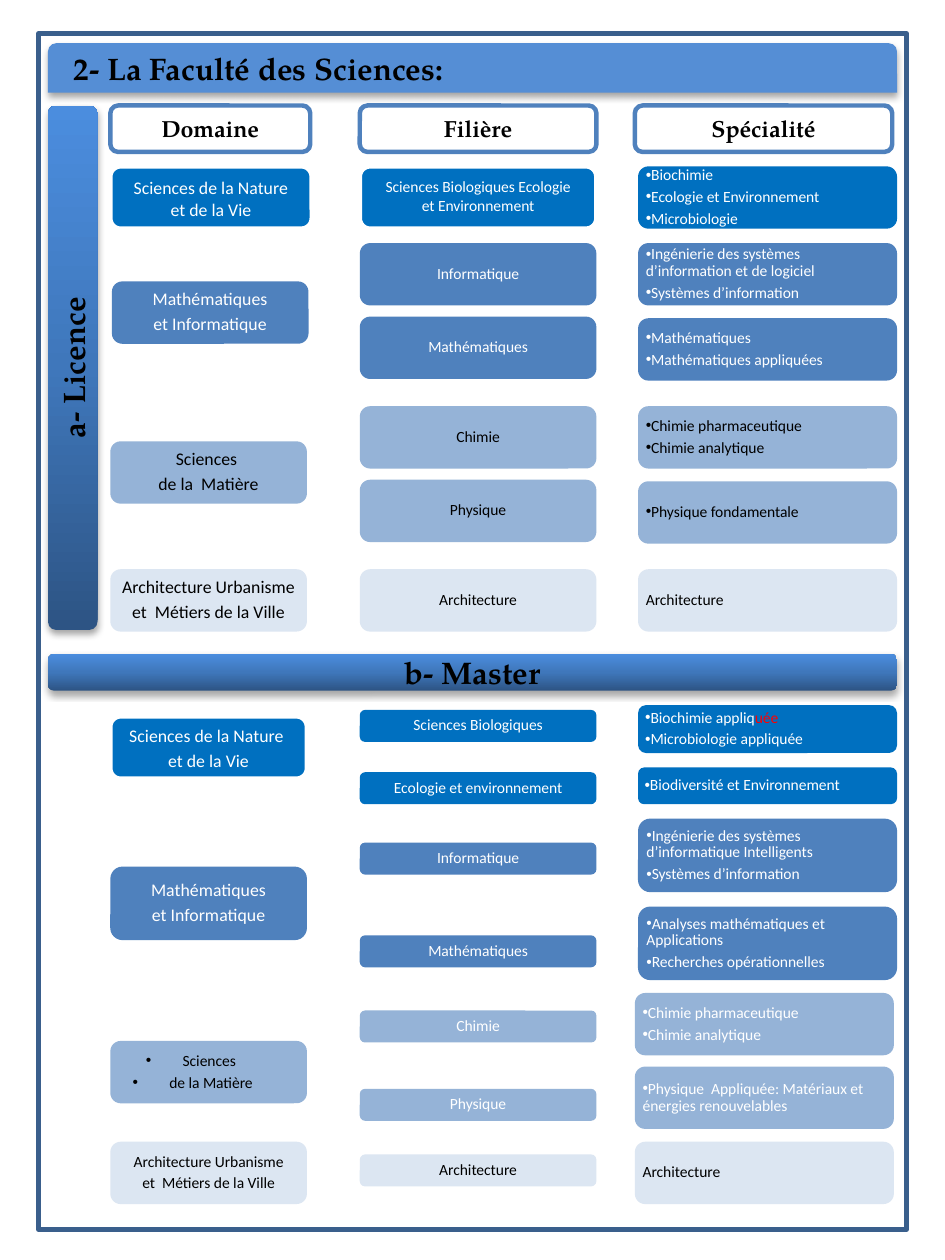
from copy import deepcopy
from pptx import Presentation
from pptx.dml.color import RGBColor as Rgb
from pptx.enum.shapes import MSO_SHAPE as Form
from pptx.enum.text import MSO_ANCHOR as Anchor, PP_ALIGN as Align
from pptx.oxml.ns import qn
from pptx.oxml.xmlchemy import OxmlElement as Node
from pptx.util import Inches, Pt

HUES = {
    "white": "FFFFFF", "black": "000000", "red": "FF0000", "bar": "558ED5",
    "frame": "3A5F8C", "deep": "0070C0", "blue": "4F81BD", "sky": "95B3D7",
    "pale": "DCE6F2", "low": "2D5484", "mid": "3F77BB", "top": "4B8DDE",
}
SERIF = {"name": "TeX Gyre Pagella", "bold": True}
SANS = {"name": "Calibri", "bold": False}
SLIM = (0.03, 0.03, 0.03, 0.03)
WIDE = (0.1, 0.05, 0.1, 0.05)
RIM = {"line": "white", "pad": WIDE, "anchor": Anchor.TOP}
SOLID = {**RIM, "tight": False}
COLS = {"dom": (0.69, 1.23), "fil": (2.25, 1.48), "spec": (3.99, 1.62)}

HEADS = [(0.69, 1.25, "Domaine"), (2.25, 1.48, "Filière"), (3.97, 1.61, "Spécialité")]

DOM = [
    (1.04, 0.39, "deep", "white", "Sciences de la Nature et de la Vie", {**SOLID, "wide": 1.26}),
    (1.76, 0.39, "blue", "white", "Mathématiques\net Informatique", {"left": 0.7}),
    (2.76, 0.39, "sky", "black", "Sciences \nde la  Matière", {}),
    (3.56, 0.39, "pale", "black", "Architecture Urbanisme\net  Métiers de la Ville", {}),
    (4.48, 0.39, "deep", "white", "Sciences de la Nature \net de la Vie", RIM),
    (5.42, 0.46, "blue", "white", "Mathématiques\net Informatique", {}),
    (6.51, 0.39, "sky", "black", "Sciences \nde la Matière",
     {"size": 7, "dots": True, "hang": 0.23, "pad": (0.03, 0.03, 0.23, 0.03)}),
    (7.14, 0.39, "pale", "black", "Architecture Urbanisme\net  Métiers de la Ville", {"size": 7}),
]
FIL = [
    (1.04, 0.39, "deep", "white", "Sciences Biologiques Ecologie et Environnement", SOLID),
    (1.52, 0.39, "blue", "white", "Informatique", {}),
    (1.98, 0.39, "blue", "white", "Mathématiques", {}),
    (2.54, 0.39, "sky", "black", "Chimie", {}),
    (3, 0.39, "sky", "black", "Physique", {}),
    (3.56, 0.39, "pale", "black", "Architecture", {}),
    (4.44, 0.2, "deep", "white", "Sciences Biologiques", {}),
    (4.83, 0.2, "deep", "white", "Ecologie et environnement", {}),
    (5.27, 0.2, "blue", "white", "Informatique", {}),
    (5.85, 0.2, "blue", "white", "Mathématiques", {}),
    (6.32, 0.2, "sky", "white", "Chimie", {}),
    (6.81, 0.2, "sky", "white", "Physique", {}),
    (7.22, 0.2, "pale", "black", "Architecture", {}),
]
SPEC = [
    (1.04, 0.39, "deep", "white", "Biochimie\nEcologie et Environnement\nMicrobiologie", {}),
    (1.52, 0.39, "blue", "white",
     "Ingénierie des systèmes d’information et de logiciel\nSystèmes d’information", {}),
    (1.99, 0.39, "blue", "white", "Mathématiques\nMathématiques appliquées", {}),
    (2.54, 0.39, "sky", "black", "Chimie pharmaceutique\nChimie analytique", {}),
    (3.01, 0.39, "sky", "black", "Physique fondamentale", {}),
    (3.56, 0.39, "pale", "black", "Architecture", {"dots": False}),
    (4.41, 0.3, "deep", "white", "Biochimie appliq|uée\nMicrobiologie appliquée", {}),
    (4.8, 0.23, "deep", "white", "Biodiversité et Environnement", {}),
    (5.12, 0.46, "blue", "white",
     "Ingénierie des systèmes d’informatique Intelligents\nSystèmes d’information", {}),
    (5.67, 0.46, "blue", "white",
     "Analyses mathématiques et Applications\nRecherches opérationnelles", {}),
    (6.21, 0.39, "sky", "white", "Chimie pharmaceutique\nChimie analytique", {"left": 3.97}),
    (6.67, 0.39, "sky", "white",
     "Physique  Appliquée: Matériaux et énergies renouvelables", {"left": 3.97}),
    (7.14, 0.39, "pale", "black", "Architecture", {"left": 3.97, "dots": False}),
]


def hue(key):
    return Rgb.from_string(HUES[key])


def put(item, **vals):
    for key, val in vals.items():
        setattr(item, key, val)


def node(host, tag, **vals):
    part = Node(tag)
    for key, val in vals.items():
        part.set(key, str(val))
    host.append(part)
    return part


class Deck:
    def __init__(self):
        self.file = Presentation()
        put(self.file, slide_width=Inches(5.91), slide_height=Inches(7.88))
        self.page = self.file.slides.add_slide(self.file.slide_layouts[5])

    def shape(self, form, spot, fill=None, line=None):
        item = self.page.shapes.add_shape(form, *map(Inches, spot))
        item.shadow.inherit = False
        if fill:
            item.fill.solid()
            item.fill.fore_color.rgb = hue(fill)
        else:
            item.fill.background()
        if line:
            item.line.color.rgb = hue(line)
            item.line.width = Pt(2)
        else:
            item.line.fill.background()
        return item

    def shade(self, item):
        host = item._element.spPr.find(qn("a:effectLst"))
        cast = node(host, "a:outerShdw", blurRad=Pt(3.1), dist=Pt(1.8),
                    dir=5400000, rotWithShape=0)
        tint = node(cast, "a:srgbClr", val=HUES["black"])
        node(tint, "a:alpha", val=35000)

    def label(self, item, text, font, size, ink="black", align=Align.CENTER,
              anchor=Anchor.MIDDLE, pad=WIDE, tight=False, dots=False, hang=0):
        frame = item.text_frame
        put(frame, word_wrap=True, vertical_anchor=anchor)
        for side, gap in zip(("left", "top", "right", "bottom"), pad):
            setattr(frame, f"margin_{side}", Inches(gap))
        for spot, words in enumerate(text.split("\n")):
            para = frame.add_paragraph() if spot else frame.paragraphs[0]
            para.alignment = align
            if tight:
                put(para, line_spacing=0.9, space_after=Pt(size * 0.33))
            if dots:
                rule = para._p.get_or_add_pPr()
                rule.set("marL", str(Inches(hang)))
                rule.set("indent", str(-Inches(hang)))
                node(rule, "a:buFont", typeface="Arial")
                node(rule, "a:buChar", char="•")
            for bit, tone in zip(words.split("|"), (ink, "red")):
                run = para.add_run()
                run.text = bit
                put(run.font, size=Pt(size), **font)
                run.font.color.rgb = hue(tone)

    def title(self, text, spot):
        item = self.page.shapes.title
        put(item, **dict(zip(("left", "top", "width", "height"), map(Inches, spot))))
        self.page.shapes._spTree.append(item._element)
        self.label(item, text, SERIF, 14, align=Align.LEFT, pad=(0.16, 0, 0.1, 0))

    def band(self, text, spot, turn=False):
        item = self.shape(Form.ROUNDED_RECTANGLE, spot, "mid")
        item.fill.gradient()
        item.fill.gradient_angle = 90
        stops = item._element.spPr.find(".//" + qn("a:gsLst"))
        stops.insert(1, deepcopy(stops[0]))
        for stop, place, tone in zip(item.fill.gradient_stops, (0, 0.5, 1), ("low", "mid", "top")):
            stop.position = place
            stop.color.rgb = hue(tone)
        self.shade(item)
        self.label(item, text, SERIF, 14)
        if turn:
            item.text_frame._txBody.bodyPr.set("vert", "vert270")

    def head(self, left, wide, text):
        item = self.shape(Form.ROUNDED_RECTANGLE, (left, 0.66, wide, 0.29), "white", "blue")
        self.label(item, text, SERIF, 10.5, pad=SLIM)

    def cell(self, spot, fill, ink, text, line=None, size=7, **form):
        item = self.shape(Form.ROUNDED_RECTANGLE, spot, fill, line)
        self.label(item, text, SANS, size, ink, **{"pad": SLIM, "tight": True, **form})

    def stack(self, col, rows, **base):
        for top, high, fill, ink, text, more in rows:
            form = {**base, **more}
            left = form.pop("left", COLS[col][0])
            wide = form.pop("wide", COLS[col][1])
            self.cell((left, top, wide, high), fill, ink, text, **form)


def main():
    deck = Deck()
    deck.shade(deck.shape(Form.ROUND_2_SAME_RECTANGLE, (0.3, 0.27, 5.31, 0.31), "bar"))
    deck.shape(Form.RECTANGLE, (0.24, 0.21, 5.43, 7.48), line="frame")
    deck.title("2- La Faculté des Sciences:", (0.3, 0.27, 3.83, 0.31))
    deck.band("a- Licence", (0.3, 0.66, 0.31, 3.28), turn=True)
    deck.band("b- Master", (0.3, 4.09, 5.31, 0.23))
    for head in HEADS:
        deck.head(*head)
    deck.stack("dom", DOM, size=8)
    deck.stack("fil", FIL)
    deck.stack("spec", SPEC, align=Align.LEFT, dots=True)
    deck.file.save("out.pptx")


if __name__ == "__main__":
    main()
